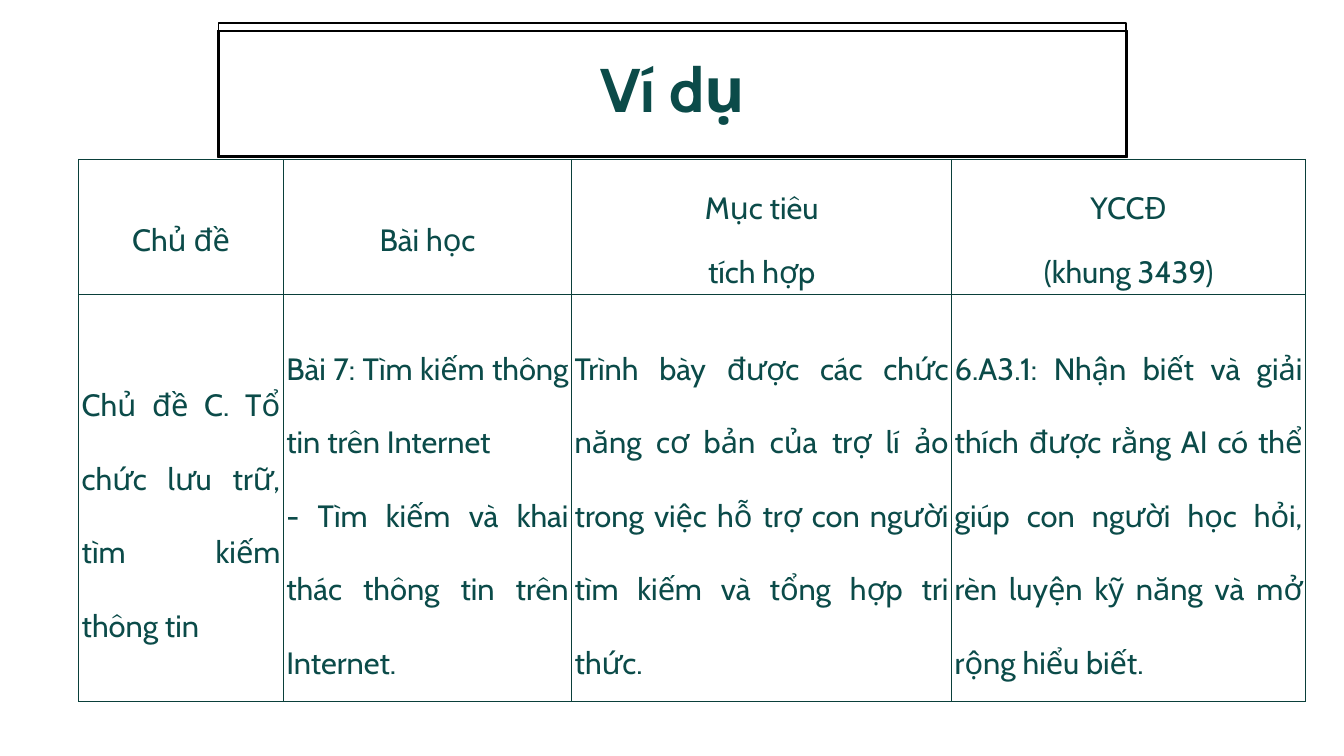
import pptx
import pptx.util
import pptx.dml.color
import pptx.enum.text
import pptx.oxml
import pptx.oxml.ns

Inches, Pt = pptx.util.Inches, pptx.util.Pt
RGBColor = pptx.dml.color.RGBColor
Align, Anchor = pptx.enum.text.PP_ALIGN, pptx.enum.text.MSO_ANCHOR

BLACK = RGBColor(0x00, 0x00, 0x00)
WHITE = RGBColor(0xFF, 0xFF, 0xFF)
DARK = RGBColor(0x0A, 0x3F, 0x3A)
TEAL = RGBColor(0x0B, 0x4B, 0x49)


def put(frame, text, size=22, bold=False, lead=46.1, align=Align.CENTER):
    """Write text into a frame, one paragraph per line."""
    frame.word_wrap = True
    frame.text = text
    for para in frame.paragraphs:
        para.alignment = align
        para.line_spacing = Pt(lead)
        for run in para.runs:
            font = run.font
            font.name, font.size, font.bold = "Cabin", Pt(size), bold
            font.color.rgb = TEAL


def outline(rings):
    """Draw closed rings of points as one shape with a thin black line."""
    pen = None
    for ring in rings:
        points = [(Inches(x), Inches(y)) for x, y in ring]
        if pen is None:
            pen = slide.shapes.build_freeform(*points[0])
        else:
            pen.move_to(*points[0])
        pen.add_line_segments(points[1:], close=True)
    shape = pen.convert_to_shape()
    shape.shadow.inherit = False
    shape.line.color.rgb = BLACK
    shape.line.width = Pt(1)
    return shape


deck = pptx.Presentation()
deck.slide_width, deck.slide_height = Inches(13.33), Inches(7.5)
slide = deck.slides.add_slide(deck.slide_layouts[6])

# Title frame
outer = [(2.16, 0.3), (11.18, 0.3), (11.18, 1.56), (2.16, 1.56)]
inner = [(2.18, 0.31), (2.18, 1.55), (11.16, 1.55), (11.16, 0.31)]
frame = outline([outer, inner])
frame.fill.solid()
frame.fill.fore_color.rgb = DARK
panel = outline([[(2.17, 0.23), (11.17, 0.23), (11.17, 1.55), (2.17, 1.55)]])
panel.fill.background()

# Title
title = slide.shapes.add_textbox(Inches(2.17), Inches(0.2), Inches(9), Inches(1.35))
body = title.text_frame
body.margin_left = body.margin_right = body.margin_top = body.margin_bottom = 0
body.vertical_anchor = Anchor.MIDDLE
put(body, "Ví dụ", size=44, bold=True, lead=52.8)

# Table
heads = ["Chủ đề", "Bài học", "Mục tiêu\ntích hợp", "YCCĐ\n(khung 3439)"]
lesson = [
    "Chủ đề C. Tổ chức lưu trữ, tìm kiếm thông tin",
    "Bài 7: Tìm kiếm thông tin trên Internet\n"
    "- Tìm kiếm và khai thác thông tin trên Internet.",
    "Trình bày được các chức năng cơ bản của trợ lí ảo trong việc hỗ trợ "
    "con người tìm kiếm và tổng hợp tri thức.",
    "6.A3.1: Nhận biết và giải thích được rằng AI có thể giúp con người "
    "học hỏi, rèn luyện kỹ năng và mở rộng hiểu biết.",
]
widths, heights = [2.03, 2.86, 3.77, 3.51], [0.92, 4.04]
styles = [{}, {"lead": 52.5, "align": Align.JUSTIFY}]

table = slide.shapes.add_table(
    2, 4, Inches(0.78), Inches(1.58), Inches(sum(widths)), Inches(sum(heights))
).table
for col, width in zip(table.columns, widths):
    col.width = Inches(width)
for row, height, texts, style in zip(table.rows, heights, [heads, lesson], styles):
    row.height = Inches(height)
    for cell, text in zip(row.cells, texts):
        cell.margin_left = cell.margin_right = Inches(0.03)
        cell.margin_top = cell.margin_bottom = Inches(0.03)
        cell.vertical_anchor = Anchor.MIDDLE
        put(cell.text_frame, text, **style)
        props = cell._tc.get_or_add_tcPr()
        for side in "LRTB":
            props.append(pptx.oxml.parse_xml(
                f'<a:ln{side} {pptx.oxml.ns.nsdecls("a")} w="{Pt(0.75)}">'
                f'<a:solidFill><a:srgbClr val="{DARK}"/></a:solidFill></a:ln{side}>'
            ))
        cell.fill.solid()
        cell.fill.fore_color.rgb = WHITE

deck.save("out.pptx")
